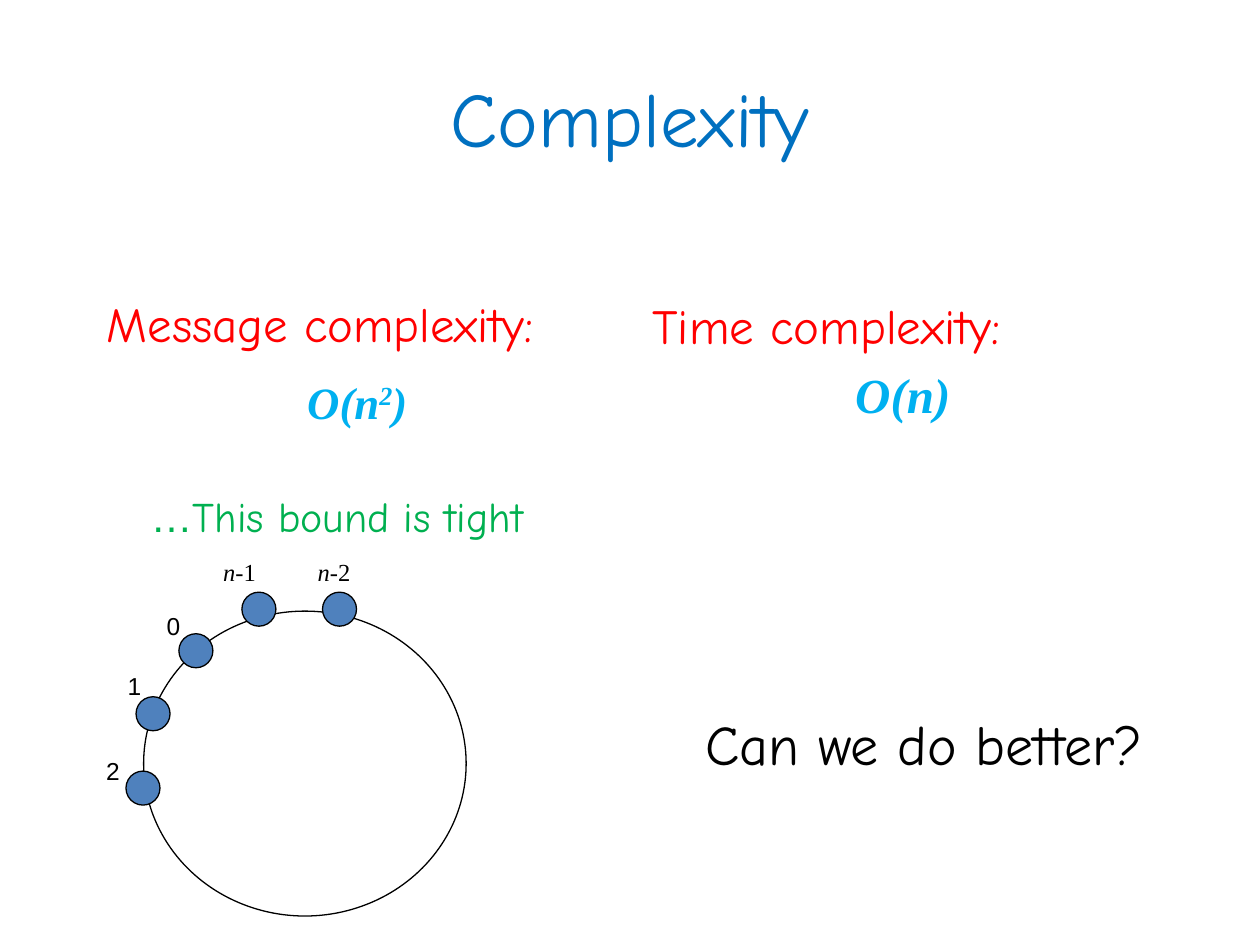
import pptx
import pptx.dml.color
import pptx.enum.shapes
import pptx.enum.text
import pptx.util
from lxml import etree
from pptx.oxml.ns import qn

Inches, Pt = pptx.util.Inches, pptx.util.Pt
ALIGN = pptx.enum.text.PP_ALIGN


def color(hex_string):
    return pptx.dml.color.RGBColor.from_string(hex_string)


class SlideBuilder:
    HAND, SERIF, COMPLEX = "Comic Neue", "Times New Roman", "Arial"
    BLACK, BLUE, RED = "000000", "0070C0", "FF0000"
    CYAN, GREEN, NODE = "00B0F0", "00B050", "4F81BD"

    def __init__(self, presentation):
        self.slide = presentation.slides.add_slide(presentation.slide_layouts[5])
        self.shapes = self.slide.shapes

    def title(self, text, left, top, width, height):
        heading = self.shapes.title
        heading.left, heading.top = Inches(left), Inches(top)
        heading.width, heading.height = Inches(width), Inches(height)
        heading.text_frame.vertical_anchor = pptx.enum.text.MSO_ANCHOR.MIDDLE
        line = heading.text_frame.paragraphs[0]
        line.alignment = ALIGN.CENTER
        self.run(line, text, 44, self.HAND, self.BLUE)

    def box(self, left, top, width, height, parent=None, wrap=False):
        frame = (parent or self.shapes).add_textbox(
            Inches(left), Inches(top), Inches(width), Inches(height)).text_frame
        frame.word_wrap = wrap
        if not wrap:
            frame.auto_size = pptx.enum.text.MSO_AUTO_SIZE.SHAPE_TO_FIT_TEXT
        return frame

    def right_to_left(self, line):
        line.alignment = ALIGN.RIGHT
        line._p.get_or_add_pPr().set("rtl", "1")

    def run(self, line, text, size, font, ink, bold=False, italic=False,
            raised=False, complex_font=None):
        run = line.add_run()
        run.text = text
        run.font.size, run.font.name = Pt(size), font
        run.font.bold, run.font.italic = bold, italic
        run.font.color.rgb = color(ink)
        properties = run._r.get_or_add_rPr()
        if raised:
            properties.set("baseline", "30000")
        if complex_font:
            etree.SubElement(properties, qn("a:cs")).set("typeface", complex_font)

    def bound(self, place, heading, size, formula, formula_size, gap, spacing):
        """A red heading with a centred formula; formula is (text, raised) parts."""
        frame = self.box(*place, wrap=True)
        first, second = frame.paragraphs[0], frame.add_paragraph()
        first.space_before, second.space_before = Pt(5.6), Pt(gap)
        first.line_spacing = second.line_spacing = spacing
        second.alignment = ALIGN.CENTER
        self.run(first, heading, size, self.HAND, self.RED)
        for text, raised in formula:
            self.run(second, text, formula_size, self.SERIF, self.CYAN,
                     bold=True, italic=True, raised=raised)

    def circle(self, parent, left, top, width, height, fill=None):
        oval = parent.add_shape(
            pptx.enum.shapes.MSO_SHAPE.OVAL,
            Inches(left), Inches(top), Inches(width), Inches(height))
        oval.shadow.inherit = False
        if fill:
            oval.fill.solid()
            oval.fill.fore_color.rgb = color(fill)
        else:
            oval.fill.background()
        oval.line.color.rgb = color(self.BLACK)
        oval.line.width = Pt(0.75)

    def label(self, parent, left, top, width, variable, number):
        line = self.box(left, top, width, 0.33, parent).paragraphs[0]
        self.right_to_left(line)
        if variable:
            self.run(line, variable, 14, self.SERIF, self.BLACK, italic=True)
        self.run(line, number, 14, self.SERIF, self.BLACK,
                 complex_font=self.COMPLEX)


def main():
    presentation = pptx.Presentation()
    presentation.slide_width, presentation.slide_height = Inches(10), Inches(7.5)
    page = SlideBuilder(presentation)
    page.title("Complexity", 0.5, 0.3, 9, 1.25)

    # The two complexity bounds
    page.bound((0.75, 2.41, 4.17, 1.06), "Message complexity:", 27.9,
               [("O(n", False), ("2", True), (")", False)], 25.6, 22, 0.7)
    page.bound((5.08, 2.3, 4.17, 1.56), "Time complexity:", 28,
               [("O(n)", False)], 28, 5.6, 1.0)

    # Remarks
    question = page.box(5.5, 5.58, 4.03, 0.64).paragraphs[0]
    page.run(question, "Can we do better?", 32, page.HAND, page.BLACK)
    tightness = page.box(0.87, 3.84, 3.38, 0.5).paragraphs[0]
    page.right_to_left(tightness)
    page.run(tightness, "This bound is tight…", 24, page.HAND, page.GREEN,
             complex_font=page.COMPLEX)

    # Ring with its numbered nodes
    ring = page.shapes.add_group_shape().shapes
    page.circle(ring, 1.14, 4.85, 2.56, 2.42)
    for left, top in [(1.92, 4.7), (2.56, 4.7), (1, 6.12), (1.42, 5.03), (1.08, 5.53)]:
        page.circle(ring, left, top, 0.27, 0.27, page.NODE)
    for left, top, width, variable, number in [
            (1.23, 4.8, 0.3, "", "0"), (0.92, 5.28, 0.3, "", "1"),
            (0.75, 5.95, 0.3, "", "2"), (1.67, 4.37, 0.46, "n", "-1"),
            (2.42, 4.37, 0.46, "n", "-2")]:
        page.label(ring, left, top, width, variable, number)

    presentation.save("out.pptx")


if __name__ == "__main__":
    main()
